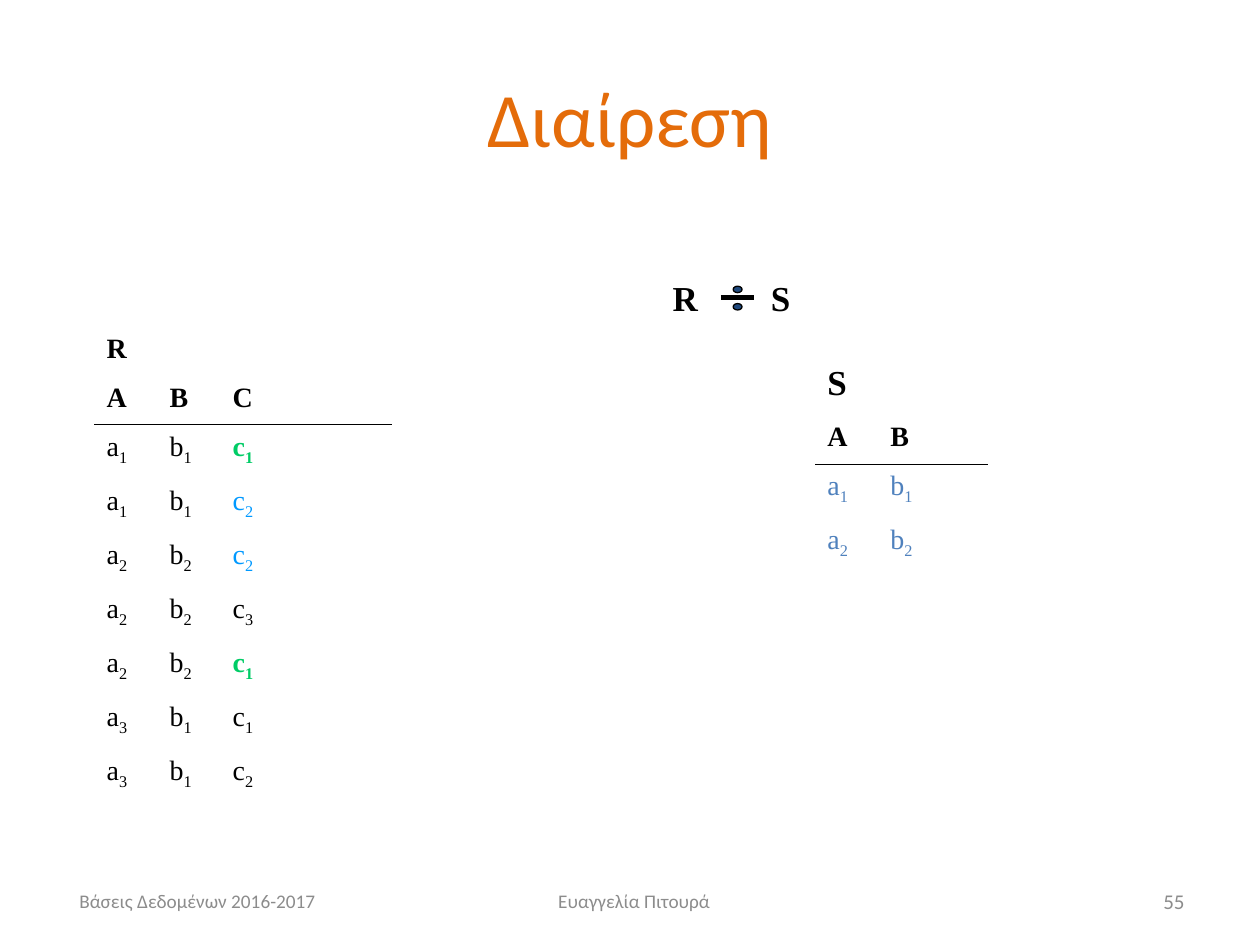
from lxml.etree import SubElement
from pptx import Presentation
from pptx.dml.color import RGBColor
from pptx.enum.shapes import MSO_CONNECTOR, MSO_SHAPE
from pptx.enum.text import MSO_ANCHOR as Anchor, PP_ALIGN as Align
from pptx.oxml.ns import qn
from pptx.util import Cm, Pt

BLACK = RGBColor(0x00, 0x00, 0x00)
GREEN = RGBColor(0x00, 0xCC, 0x66)
SKY = RGBColor(0x00, 0x99, 0xFF)
BLUE = RGBColor(0x4F, 0x81, 0xBD)
NAVY = RGBColor(0x1F, 0x49, 0x7D)
ORANGE = RGBColor(0xE4, 0x6C, 0x0A)
GREY = RGBColor(0x8C, 0x8C, 0x8C)
SERIF, SANS = "Times New Roman", "Calibri"

PLAIN = {"color": BLACK}
HEADING = {"color": BLACK, "bold": True}
MATCH = {"color": GREEN, "bold": True}
PARTIAL = {"color": SKY}
DIVISOR = {"color": BLUE}
R_ROWS = [
    ("a1 b1 c1", MATCH),
    ("a1 b1 c2", PARTIAL),
    ("a2 b2 c2", PARTIAL),
    ("a2 b2 c3", PLAIN),
    ("a2 b2 c1", MATCH),
    ("a3 b1 c1", PLAIN),
    ("a3 b1 c2", PLAIN),
]
S_ROWS = ["a1 b1", "a2 b2"]
FOOTERS = [
    ("Βάσεις Δεδομένων 2016-2017", 1.35, 5.92, 11, Align.LEFT),
    ("Ευαγγελία Πιτουρά", 8.76, 8.05, 11, Align.CENTER),
    ("55", 18.21, 5.92, 12, Align.RIGHT),
]


def add_span(para, text, size, color, name=SERIF, bold=False, subscript=False):
    """Append formatted text to a paragraph."""
    span = para.add_run()
    span.text = text
    for key, value in {"size": Pt(size), "name": name, "bold": bold}.items():
        setattr(span.font, key, value)
    span.font.color.rgb = color
    if subscript:
        span.font._element.set("baseline", "-25000")


def add_box(page, left, top, width, height, anchor=Anchor.TOP):
    """Add a wrapping text box and return its text frame."""
    frame = page.shapes.add_textbox(Cm(left), Cm(top), Cm(width), Cm(height)).text_frame
    for key, value in {"word_wrap": True, "vertical_anchor": anchor}.items():
        setattr(frame, key, value)
    return frame


def set_tabs(para, *stops):
    """Give a paragraph left tab stops in centimetres."""
    tabs = SubElement(para._p.get_or_add_pPr(), qn("a:tabLst"))
    for stop in stops:
        SubElement(tabs, qn("a:tab"), pos=str(Cm(stop)), algn="l")


def add_rule(shapes, left, top, width, weight=0.75):
    """Draw a horizontal black line."""
    rule = shapes.add_connector(
        MSO_CONNECTOR.STRAIGHT, Cm(left), Cm(top), Cm(left + width), Cm(top))
    rule.line.color.rgb = BLACK
    rule.line.width = Pt(weight)
    SubElement(rule._element.spPr, qn("a:effectLst"))


def add_relation(page, place, name, name_size, columns, rows):
    """Write a relation as a name, column heads and subscripted tuples."""
    frame = add_box(page, *place)
    add_span(frame.paragraphs[0], name, name_size, **HEADING)
    head = frame.add_paragraph()
    add_span(head, "\t".join(columns), 16, **HEADING)
    for cells in rows:
        para = frame.add_paragraph()
        for index, (cell, style) in enumerate(cells):
            tab = "\t" if index else ""
            add_span(para, tab + cell[0], 16, **style)
            add_span(para, cell[1:], 16, subscript=True, **style)
    for para in frame.paragraphs[1:]:
        para.space_before = Pt(9)
        set_tabs(para, 1.27, 2.54)


def add_division_sign(page):
    """Draw the division sign as a group of two dots and a bar."""
    sign = page.shapes.add_group_shape()
    for top in (5.77, 6.12):
        dot = sign.shapes.add_shape(
            MSO_SHAPE.OVAL, Cm(14.78), Cm(top), Cm(0.18), Cm(0.13))
        dot.shadow.inherit = False
        dot.fill.solid()
        dot.fill.fore_color.rgb = NAVY
        dot.line.color.rgb = BLACK
        dot.line.width = Pt(0.75)
    add_rule(sign.shapes, 14.53, 5.99, 0.66, 3)


def add_title(page, text):
    """Place and format the title placeholder."""
    title = page.shapes.title
    place = {"left": 1.27, "top": 0.76, "width": 22.86, "height": 3.18}
    for key, value in place.items():
        setattr(title, key, Cm(value))
    title.text_frame.vertical_anchor = Anchor.MIDDLE
    para = title.text_frame.paragraphs[0]
    para.alignment = Align.CENTER
    add_span(para, text, 44, ORANGE, SANS)


def add_footer(page, text, left, width, size, align):
    """Write one part of the footer line."""
    para = add_box(page, left, 17.65, width, 1.02, Anchor.MIDDLE).paragraphs[0]
    para.alignment = align
    add_span(para, text, size, GREY, SANS)


def main():
    """Build the slide on relational division."""
    deck = Presentation()
    deck.slide_width, deck.slide_height = Cm(25.4), Cm(19.05)
    page = deck.slides.add_slide(deck.slide_layouts[5])
    add_title(page, "Διαίρεση")

    add_division_sign(page)
    formula = add_box(page, 13.31, 5.44, 6.6, 1.09).paragraphs[0]
    add_span(formula, "R\tS", 20, **HEADING)
    set_tabs(formula, 1.98)

    r_rows = [list(zip(row.split(), (PLAIN, PLAIN, style))) for row, style in R_ROWS]
    add_relation(page, (1.9, 6.53, 9.17, 9.09), "R", 16, "ABC", r_rows)
    add_rule(page.shapes, 1.9, 8.56, 6)

    s_rows = [[(cell, DIVISOR) for cell in row.split()] for row in S_ROWS]
    add_relation(page, (16.43, 7.14, 4.85, 4.85), "S", 20, "AB", s_rows)
    add_rule(page.shapes, 16.43, 9.37, 3.48)

    for footer in FOOTERS:
        add_footer(page, *footer)
    deck.save("out.pptx")


if __name__ == "__main__":
    main()
